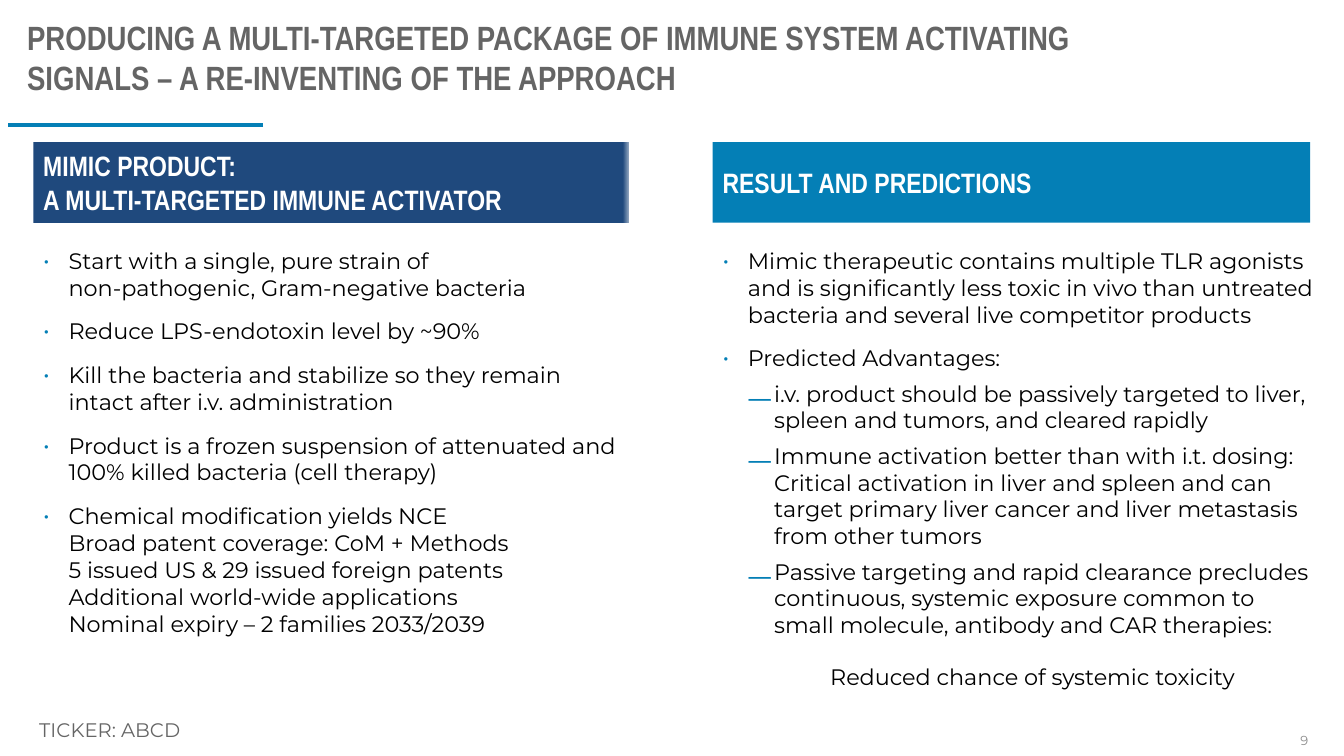
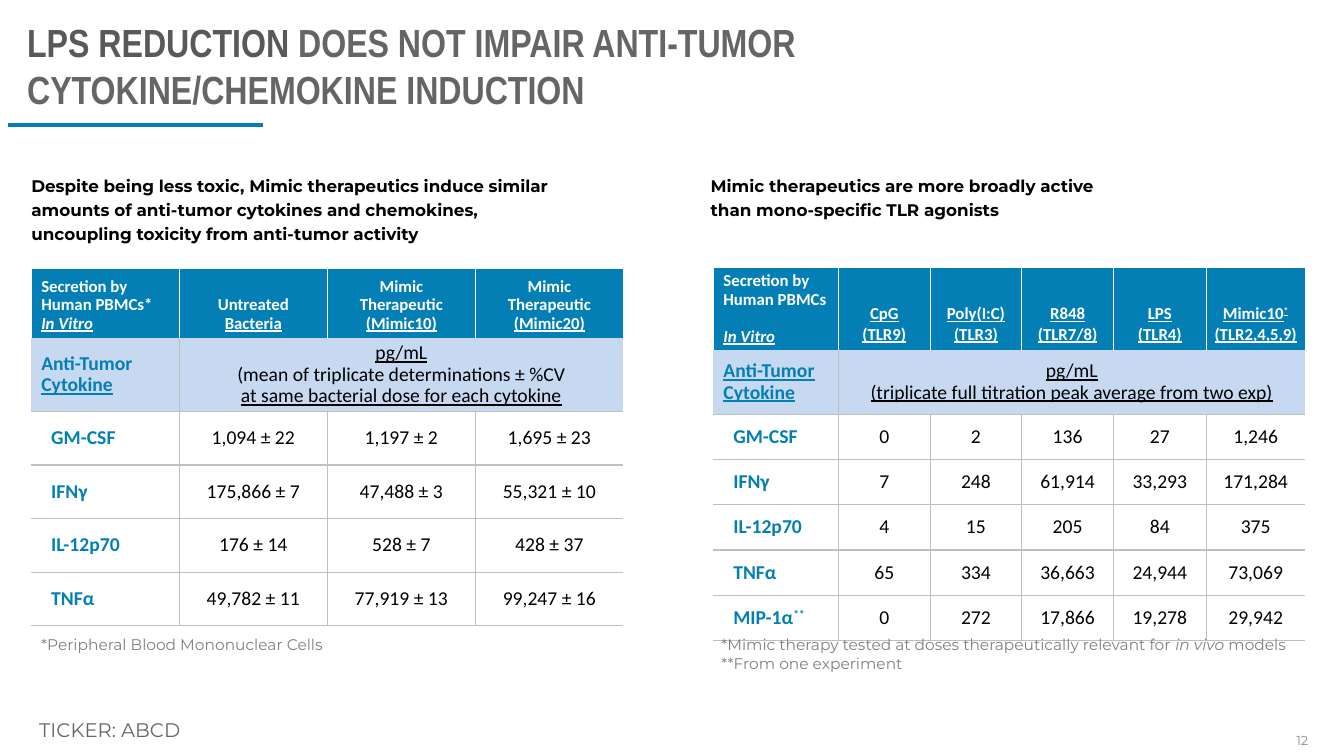
from lxml import etree
from pptx import Presentation
from pptx.dml.color import RGBColor
from pptx.enum.shapes import MSO_CONNECTOR, MSO_SHAPE
from pptx.enum.text import MSO_ANCHOR, PP_ALIGN
from pptx.oxml.ns import qn
from pptx.util import Cm, Pt

LEFT, CENTER, RIGHT = PP_ALIGN.LEFT, PP_ALIGN.CENTER, PP_ALIGN.RIGHT
TOP, MIDDLE, BOTTOM = MSO_ANCHOR.TOP, MSO_ANCHOR.MIDDLE, MSO_ANCHOR.BOTTOM
RECTANGLE, STRAIGHT = MSO_SHAPE.RECTANGLE, MSO_CONNECTOR.STRAIGHT

BLUE = RGBColor(0x04, 0x7F, 0xB6)
NAVY = RGBColor(0x1F, 0x49, 0x7D)
NAVY_EDGE = RGBColor(0x8F, 0xA4, 0xBE)
PALE_BLUE = RGBColor(0xC6, 0xD9, 0xF1)
TITLE_GREY = RGBColor(0x65, 0x65, 0x65)
DARK_GREY = RGBColor(0x59, 0x59, 0x59)
NOTE_GREY = RGBColor(0x80, 0x80, 0x80)
NUMBER_GREY = RGBColor(0x8C, 0x8C, 0x8C)
RULE_GREY = RGBColor(0xBF, 0xBF, 0xBF)
WHITE = RGBColor(0xFF, 0xFF, 0xFF)
BLACK = RGBColor(0, 0, 0)

HEADING_FONT, BODY_FONT, TABLE_FONT = "Arial Narrow", "Montserrat", "Calibri"
NO_TABLE_STYLE = "{2D5ABB26-0587-4C30-8999-92F81FD0307C}"
FOOTER = "TICKER: ABCD"

APPROACH_TITLE = [
    "PRODUCING A MULTI-TARGETED PACKAGE OF IMMUNE SYSTEM ACTIVATING "
    "SIGNALS – A RE-INVENTING OF THE APPROACH"]
PRODUCT_HEADING = ["MIMIC PRODUCT:", "A MULTI-TARGETED IMMUNE ACTIVATOR"]
PRODUCT_POINTS = [
    ("point", "Start with a single, pure strain of\nnon-pathogenic, Gram-negative bacteria"),
    ("point", "Reduce LPS-endotoxin level by ~90%"),
    ("point", "Kill the bacteria and stabilize so they remain intact after i.v. administration"),
    ("point", "Product is a frozen suspension of attenuated and 100% killed bacteria (cell therapy)"),
    ("point", "Chemical modification yields NCE\nBroad patent coverage: CoM + Methods\n"
              "5 issued US & 29 issued foreign patents\nAdditional world-wide applications\n"
              "Nominal expiry – 2 families 2033/2039"),
]
RESULT_HEADING = ["RESULT AND PREDICTIONS"]
RESULT_POINTS = [
    ("point", "Mimic therapeutic contains multiple TLR agonists and is significantly less toxic "
              "in vivo than untreated bacteria and several live competitor products"),
    ("point", "Predicted Advantages:"),
    ("dash", "i.v. product should be passively targeted to liver, spleen and tumors, "
             "and cleared rapidly"),
    ("dash", "Immune activation better than with i.t. dosing:\nCritical activation in liver and "
             "spleen and can target primary liver cancer and liver metastasis from other tumors"),
    ("dash", "Passive targeting and rapid clearance precludes continuous, systemic exposure "
             "common to small molecule, antibody and CAR therapies:"),
    ("closing", "Reduced chance of systemic toxicity"),
]
POINT_STYLES = {
    "point": dict(bullet="•", margin=0.64, hanging=0.64, before=12, align=LEFT),
    "dash": dict(bullet="⎼", margin=1.3, hanging=0.64, before=6, align=LEFT),
    "closing": dict(bullet=None, margin=0.66, hanging=0, before=18, align=CENTER),
}

CYTOKINE_TITLE = [("LPS REDUCTION ", "dark"),
                  "DOES NOT IMPAIR ANTI-TUMOR\nCYTOKINE/CHEMOKINE INDUCTION"]
MIMIC_STATEMENT = ["Despite being less toxic, Mimic therapeutics induce similar amounts of "
                   "anti-tumor cytokines and chemokines,\nuncoupling toxicity from "
                   "anti-tumor activity"]
AGONIST_STATEMENT = ["Mimic therapeutics are more broadly active\n"
                     "than mono-specific TLR agonists"]
PBMC_NOTE = ["*Peripheral Blood Mononuclear Cells"]
DOSE_NOTE = ["*Mimic therapy tested at doses therapeutically relevant for ",
             ("in vivo", "i"), " models\n**From one experiment"]

MIMIC_TABLE = dict(
    place=(0.79, 6.76), widths=[3.73] * 4, heights=[1.75, 1.8] + [1.35] * 4,
    side_inset=0.25, header_spacing=0.9,
    header=[
        [["Secretion by Human PBMCs*\n", ("In Vitro", "iu")]],
        [["Untreated ", ("Bacteria", "u")]],
        [["Mimic Therapeutic ", ("(Mimic10)", "u")]],
        [["Mimic Therapeutic ", ("(Mimic20)", "u")]],
    ],
    band=[
        [["Anti-Tumor ", ("Cytokine", "u")]],
        [[("pg/mL", "u")],
         ["(mean of triplicate determinations ± %CV\n",
          ("at same bacterial dose for each cytokine", "u")]],
    ],
    rows=[
        (["GM-CSF"], "1,094 ± 22", "1,197 ± 2", "1,695 ± 23"),
        (["IFNγ"], "175,866 ± 7", "47,488 ± 3", "55,321 ± 10"),
        (["IL-12p70"], "176 ± 14", "528 ± 7", "428 ± 37"),
        (["TNFα"], "49,782 ± 11", "77,919 ± 13", "99,247 ± 16"),
    ])
AGONIST_TABLE = dict(
    place=(17.98, 6.73), widths=[3.15, 2.31, 2.31, 2.31, 2.34, 2.49],
    heights=[1.7, 1.63] + [1.14] * 5, side_inset=0, header_spacing=1.0,
    header=[
        [["Secretion by Human PBMCs \n", ("In Vitro", "iu")]],
        [[("CpG", "u")], [("(TLR9)", "u")]],
        [[("Poly(I:C)", "u")], [("(TLR3)", "u")]],
        [[("R848", "u")], [("(TLR7/8)", "u")]],
        [[("LPS", "u")], [("(TLR4)", "u")]],
        [[("Mimic10", "u"), ("*", "us")], [("(TLR2,4,5,9)", "u")]],
    ],
    band=[
        [[("Anti-Tumor", "u"), " ", ("Cytokine", "u")]],
        [[("pg/mL", "u")], [("(triplicate full titration peak average from two exp)", "u")]],
    ],
    rows=[
        (["GM-CSF"], "0", "2", "136", "27", "1,246"),
        (["IFNγ"], "7", "248", "61,914", "33,293", "171,284"),
        (["IL-12p70"], "4", "15", "205", "84", "375"),
        (["TNFα"], "65", "334", "36,663", "24,944", "73,069"),
        (["MIP-1α", ("**", "s")], "0", "272", "17,866", "19,278", "29,942"),
    ])


def write(paragraph, runs, font, size, color, bold=False, align=LEFT, spacing=None):
    paragraph.alignment = align
    if spacing:
        paragraph.line_spacing = spacing
    style = paragraph.font
    style.name, style.size, style.bold = font, Pt(size), bold
    style.color.rgb = color
    for piece in runs:
        text, marks = (piece, "") if isinstance(piece, str) else piece
        for index, line in enumerate(text.split("\n")):
            if index:
                paragraph.add_line_break()
            if not line:
                continue
            run = paragraph.add_run()
            run.text = line
            if marks == "dark":
                run.font.color.rgb = DARK_GREY
                continue
            if "i" in marks:
                run.font.italic = True
            if "u" in marks:
                run.font.underline = True
            if "s" in marks:
                run.font._element.set("baseline", "30000")


def write_all(frame, paragraphs, **style):
    for index, runs in enumerate(paragraphs):
        paragraph = frame.add_paragraph() if index else frame.paragraphs[0]
        write(paragraph, runs, **style)


def add_text(slide, place, paragraphs, anchor=TOP, left_inset=0.25, **style):
    frame = slide.shapes.add_textbox(*map(Cm, place)).text_frame
    frame.word_wrap = True
    frame.vertical_anchor = anchor
    frame.margin_left = Cm(left_inset)
    write_all(frame, paragraphs, **style)
    return frame


def add_slide(deck, title, title_size, title_place, number):
    slide = deck.slides.add_slide(deck.slide_layouts[5])
    heading = slide.shapes.title
    heading.left, heading.top, heading.width, heading.height = map(Cm, title_place)
    heading.text_frame.vertical_anchor = TOP
    heading.text_frame.word_wrap = True
    write(heading.text_frame.paragraphs[0], title, HEADING_FONT, title_size, TITLE_GREY, True)
    rule = slide.shapes.add_connector(STRAIGHT, Cm(6.63), Cm(3.15), Cm(0.2), Cm(3.15))
    rule.line.color.rgb = BLUE
    rule.line.width = Pt(2.25)
    etree.SubElement(rule._element.spPr, qn("a:effectLst"))
    add_text(slide, (0.74, 17.96, 13.1, 0.86), [[FOOTER]],
             font=BODY_FONT, size=14, color=TITLE_GREY)
    add_text(slide, (32.1, 18.14, 1.12, 1.02), [[number]], anchor=MIDDLE,
             font=BODY_FONT, size=9.3, color=NUMBER_GREY, align=RIGHT)
    return slide


def add_heading(slide, left, width, lines, gradient=False):
    bar = slide.shapes.add_shape(RECTANGLE, Cm(left), Cm(3.58), Cm(width), Cm(2.03))
    bar.shadow.inherit = False
    bar.line.fill.background()
    if gradient:
        bar.fill.gradient()
        bar.fill.gradient_angle = 0
        for stop, position, color in zip(bar.fill.gradient_stops, (0.99, 1), (NAVY, NAVY_EDGE)):
            stop.position = position
            stop.color.rgb = color
    else:
        bar.fill.solid()
        bar.fill.fore_color.rgb = BLUE
    bar.text_frame.vertical_anchor = MIDDLE
    write_all(bar.text_frame, [[line] for line in lines],
              font=HEADING_FONT, size=20, color=WHITE, bold=True)


def add_points(slide, place, points):
    frame = add_text(slide, place, [])
    for index, (kind, text) in enumerate(points):
        look = POINT_STYLES[kind]
        paragraph = frame.add_paragraph() if index else frame.paragraphs[0]
        properties = paragraph._p.get_or_add_pPr()
        properties.set("marL", str(Cm(look["margin"])))
        properties.set("indent", str(-Cm(look["hanging"])))
        if look["bullet"]:
            tint = etree.SubElement(properties, qn("a:buClr"))
            etree.SubElement(tint, qn("a:srgbClr"), val=str(BLUE))
            etree.SubElement(properties, qn("a:buFont"), typeface=BODY_FONT)
            etree.SubElement(properties, qn("a:buChar"), char=look["bullet"])
        if index:
            paragraph.space_before = Pt(look["before"])
        write(paragraph, [text], BODY_FONT, 16, BLACK, align=look["align"])


def set_borders(cell, sides, color):
    properties = cell._tc.get_or_add_tcPr()
    for side in "LRTB":
        line = etree.SubElement(properties, qn("a:ln" + side), w=str(Pt(1)))
        if side in sides:
            fill = etree.SubElement(line, qn("a:solidFill"))
            etree.SubElement(fill, qn("a:srgbClr"), val=str(color))
        else:
            etree.SubElement(line, qn("a:noFill"))


def fill_cell(cell, paragraphs, fill, sides, border=RULE_GREY, anchor=MIDDLE,
              left=0.25, right=0.25, **style):
    set_borders(cell, sides, border)
    if fill is None:
        cell.fill.background()
    else:
        cell.fill.solid()
        cell.fill.fore_color.rgb = fill
    cell.vertical_anchor = anchor
    cell.margin_left, cell.margin_right = Cm(left), Cm(right)
    write_all(cell.text_frame, paragraphs, font=TABLE_FONT, **style)


def add_data_table(slide, data):
    widths, heights, inset = data["widths"], data["heights"], data["side_inset"]
    last = len(widths) - 1
    frame = slide.shapes.add_table(len(heights), len(widths), *map(
        Cm, (*data["place"], sum(widths), sum(heights))))
    table = frame.table
    table._tbl.tblPr.find(qn("a:tableStyleId")).text = NO_TABLE_STYLE
    table.first_row = table.horz_banding = False
    for column, width in zip(table.columns, widths):
        column.width = Cm(width)
    for row, height in zip(table.rows, heights):
        row.height = Cm(height)

    for index, paragraphs in enumerate(data["header"]):
        side = inset if index else 0.25
        fill_cell(table.cell(0, index), paragraphs, BLUE, "LTR", WHITE, BOTTOM, side, side,
                  size=12, color=WHITE, bold=True, align=CENTER if index else LEFT,
                  spacing=data["header_spacing"] if index else 0.9)

    label, unit = data["band"]
    fill_cell(table.cell(1, 0), label, PALE_BLUE, "RB",
              size=14, color=BLUE, bold=True, spacing=0.9)
    table.cell(1, 1).merge(table.cell(1, last))
    fill_cell(table.cell(1, 1), unit, PALE_BLUE, "LB", left=inset, right=inset,
              size=14, color=BLACK, align=CENTER, spacing=0.9)
    for index in range(2, last + 1):
        set_borders(table.cell(1, index), "B", RULE_GREY)

    for row, (name, *values) in enumerate(data["rows"], 2):
        fill_cell(table.cell(row, 0), [name], None, "RTB", left=0.5, right=inset,
                  size=14, color=BLUE, bold=True, spacing=0.9)
        for index, value in enumerate(values, 1):
            fill_cell(table.cell(row, index), [[value]], None,
                      "LTB" if index == last else "LRTB", left=inset, right=inset,
                      size=14, color=BLACK, align=CENTER, spacing=0.9)


def main():
    deck = Presentation()
    deck.slide_width, deck.slide_height = Cm(33.87), Cm(19.05)

    approach = add_slide(deck, APPROACH_TITLE, 24, (0.43, 0.3, 29.21, 1.7), "9")
    add_heading(approach, 0.84, 15.01, PRODUCT_HEADING, gradient=True)
    add_points(approach, (0.84, 6.1, 15.01, 10.19), PRODUCT_POINTS)
    add_heading(approach, 17.96, 15.06, RESULT_HEADING)
    add_points(approach, (17.96, 6.1, 15.47, 12.22), RESULT_POINTS)

    cytokines = add_slide(deck, CYTOKINE_TITLE, 28, (0.43, 0.33, 29.21, 2.82), "12")
    for left, statement in ((0.79, MIMIC_STATEMENT), (17.91, AGONIST_STATEMENT)):
        add_text(cytokines, (left, 4.22, 14.99, 2.03), [statement], left_inset=0,
                 font=BODY_FONT, size=12, color=BLACK, bold=True, spacing=Pt(17))
    for data in (MIMIC_TABLE, AGONIST_TABLE):
        add_data_table(cytokines, data)
    for left, note in ((0.79, PBMC_NOTE), (17.93, DOSE_NOTE)):
        add_text(cytokines, (left, 15.88, 14.99, 1.19), [note],
                 font=BODY_FONT, size=11, color=NOTE_GREY)

    deck.save("out.pptx")


if __name__ == "__main__":
    main()
